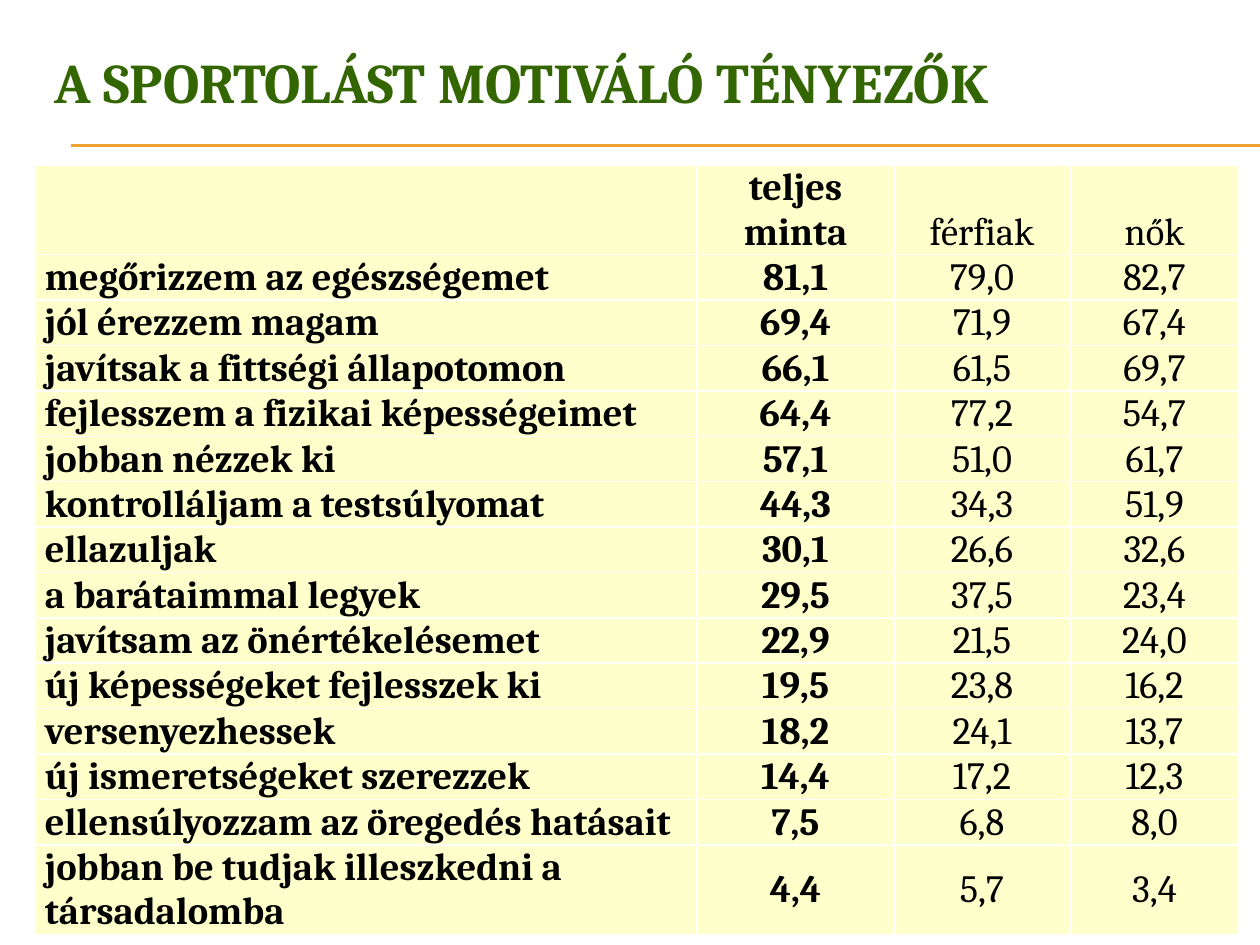
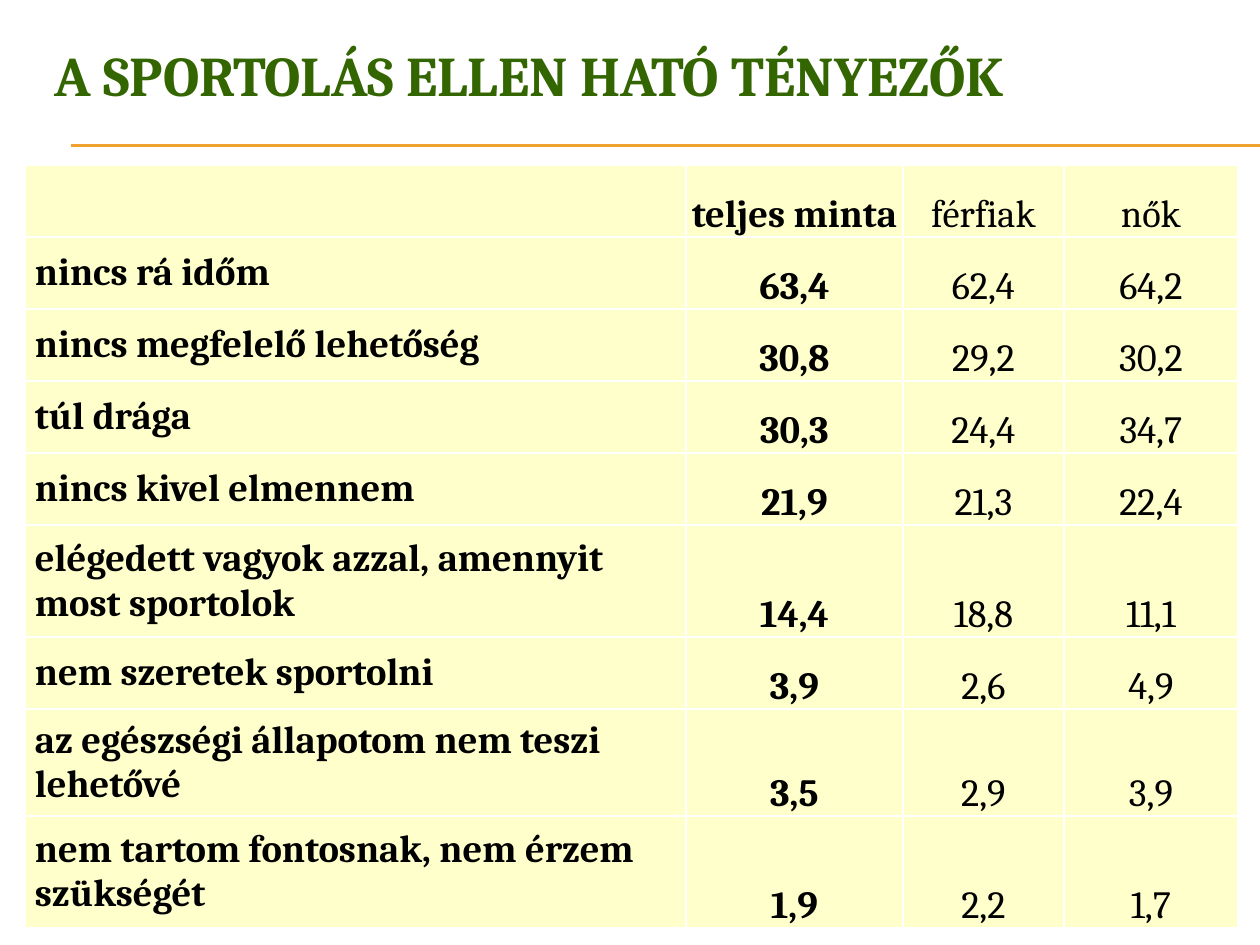
import dataclasses

import pptx
import pptx.dml.color
import pptx.enum.shapes
import pptx.enum.text
import pptx.oxml
import pptx.oxml.ns
import pptx.util

PX_PER_INCH = 126
FONT = "Cambria"
TITLE_GREEN = "336600"
RULE_GOLD = "F0A22E"
CELL_CREAM = "FFFFCC"
BORDER_WHITE = "FFFFFF"
TEXT_BLACK = "000000"

LEFT = pptx.enum.text.PP_ALIGN.LEFT
CENTER = pptx.enum.text.PP_ALIGN.CENTER
MIDDLE = pptx.enum.text.MSO_ANCHOR.MIDDLE
BOTTOM = pptx.enum.text.MSO_ANCHOR.BOTTOM

TITLE_LEFT, TITLE_WIDTH = 42, 1197
RULE_LEFT, RULE_RIGHT = 71, 1260
RULE_TOPS = (145, 146)
TABLE_TOP = 165
HEADINGS = ("", "teljes minta", "férfiak", "nők")


@dataclasses.dataclass(frozen=True)
class Factor:
    reason: str
    total: str
    men: str
    women: str
    height: int
    value_anchor: pptx.enum.text.MSO_ANCHOR = BOTTOM


@dataclasses.dataclass(frozen=True)
class FactorSlide:
    title: str
    title_top: int
    title_height: int
    table_left: int
    column_widths: tuple[int, ...]
    heading_height: int
    factors: tuple[Factor, ...]


MOTIVES = FactorSlide(
    "A SPORTOLÁST MOTIVÁLÓ TÉNYEZŐK", 26, 110, 35, (662, 197, 176, 169), 43,
    (
        Factor("megőrizzem az egészségemet", "81,1", "79,0", "82,7", 40),
        Factor("jól érezzem magam", "69,4", "71,9", "67,4", 40),
        Factor("javítsak a fittségi állapotomon", "66,1", "61,5", "69,7", 40),
        Factor("fejlesszem a fizikai képességeimet", "64,4", "77,2", "54,7", 40),
        Factor("jobban nézzek ki", "57,1", "51,0", "61,7", 40),
        Factor("kontrolláljam a testsúlyomat", "44,3", "34,3", "51,9", 40),
        Factor("ellazuljak", "30,1", "26,6", "32,6", 40),
        Factor("a barátaimmal legyek", "29,5", "37,5", "23,4", 40),
        Factor("javítsam az önértékelésemet", "22,9", "21,5", "24,0", 40),
        Factor("új képességeket fejlesszek ki", "19,5", "23,8", "16,2", 40),
        Factor("versenyezhessek", "18,2", "24,1", "13,7", 40),
        Factor("új ismeretségeket szerezzek", "14,4", "17,2", "12,3", 40),
        Factor("ellensúlyozzam az öregedés hatásait", "7,5", "6,8", "8,0", 40),
        Factor("jobban be tudjak illeszkedni a társadalomba",
               "4,4", "5,7", "3,4", 68, MIDDLE),
    ),
)

BARRIERS = FactorSlide(
    "A SPORTOLÁS ELLEN HATÓ TÉNYEZŐK", 16, 116, 25, (661, 217, 161, 174), 72,
    (
        Factor("nincs rá időm", "63,4", "62,4", "64,2", 72),
        Factor("nincs megfelelő lehetőség", "30,8", "29,2", "30,2", 72),
        Factor("túl drága", "30,3", "24,4", "34,7", 72),
        Factor("nincs kivel elmennem", "21,9", "21,3", "22,4", 72),
        Factor("elégedett vagyok azzal, amennyit most sportolok",
               "14,4", "18,8", "11,1", 112),
        Factor("nem szeretek sportolni", "3,9", "2,6", "4,9", 72),
        Factor("az egészségi állapotom nem teszi lehetővé",
               "3,5", "2,9", "3,9", 107),
        Factor("nem tartom fontosnak, nem érzem szükségét",
               "1,9", "2,2", "1,7", 112),
    ),
)


def px(length: int) -> pptx.util.Emu:
    return pptx.util.Emu(round(length * 914400 / PX_PER_INCH))


def color(value: str) -> pptx.dml.color.RGBColor:
    return pptx.dml.color.RGBColor.from_string(value)


def write(frame, text: str, *, size: int = 22, bold: bool = True,
          ink: str = TEXT_BLACK, align=LEFT) -> None:
    paragraph = frame.paragraphs[0]
    paragraph.alignment = align
    run = paragraph.add_run()
    run.text = text
    run.font.name = FONT
    run.font.size = pptx.util.Pt(size)
    run.font.bold = bold
    run.font.color.rgb = color(ink)


def add_title(slide, content: FactorSlide) -> None:
    title = slide.shapes.title
    title.left, title.top = px(TITLE_LEFT), px(content.title_top)
    title.width, title.height = px(TITLE_WIDTH), px(content.title_height)
    title.text_frame.auto_size = pptx.enum.text.MSO_AUTO_SIZE.NONE
    title.text_frame.vertical_anchor = MIDDLE
    write(title.text_frame, content.title, size=32, ink=TITLE_GREEN)


def add_title_rules(slide) -> None:
    for top in RULE_TOPS:
        rule = slide.shapes.add_connector(
            pptx.enum.shapes.MSO_CONNECTOR.STRAIGHT,
            px(RULE_LEFT), px(top), px(RULE_RIGHT), px(top))
        rule.line.color.rgb = color(RULE_GOLD)
        rule.line.width = pptx.util.Pt(0.75)
        rule._element.spPr.append(pptx.oxml.parse_xml(
            f'<a:effectLst {pptx.oxml.ns.nsdecls("a")}/>'))


def style_cell(cell, *, indent: int, anchor) -> None:
    """Set the fill, white borders, insets and anchor of a table cell."""
    cell.margin_left = px(indent)
    cell.margin_top = cell.margin_right = px(1)
    cell.margin_bottom = 0
    cell.vertical_anchor = anchor
    properties = cell._tc.get_or_add_tcPr()
    for side in ("lnL", "lnR", "lnT", "lnB"):
        properties.append(pptx.oxml.parse_xml(
            f'<a:{side} {pptx.oxml.ns.nsdecls("a")} w="{pptx.util.Pt(1)}">'
            f'<a:solidFill><a:srgbClr val="{BORDER_WHITE}"/></a:solidFill>'
            f'</a:{side}>'))
    cell.fill.solid()
    cell.fill.fore_color.rgb = color(CELL_CREAM)


def add_factor_table(slide, content: FactorSlide) -> None:
    heights = [content.heading_height] + [f.height for f in content.factors]
    table = slide.shapes.add_table(
        len(heights), len(HEADINGS), px(content.table_left), px(TABLE_TOP),
        px(sum(content.column_widths)), px(sum(heights))).table
    table.first_row = table.horz_banding = False
    for column, width in zip(table.columns, content.column_widths):
        column.width = px(width)
    for row, height in zip(table.rows, heights):
        row.height = px(height)

    rows = [(HEADINGS, BOTTOM)] + [
        ((f.reason, f.total, f.men, f.women), f.value_anchor)
        for f in content.factors]
    for row_index, (texts, value_anchor) in enumerate(rows):
        for column_index, text in enumerate(texts):
            is_reason = column_index == 0
            cell = table.cell(row_index, column_index)
            style_cell(cell, indent=10 if is_reason else 1,
                       anchor=MIDDLE if is_reason else value_anchor)
            if text:
                write(cell.text_frame, text, bold=column_index < 2,
                      align=LEFT if is_reason else CENTER)


def main() -> None:
    deck = pptx.Presentation()
    deck.slide_width, deck.slide_height = px(1260), px(945)
    title_only = deck.slide_layouts[5]
    for content in (MOTIVES, BARRIERS):
        slide = deck.slides.add_slide(title_only)
        add_title_rules(slide)
        add_title(slide, content)
        add_factor_table(slide, content)
    deck.save("out.pptx")


if __name__ == "__main__":
    main()
